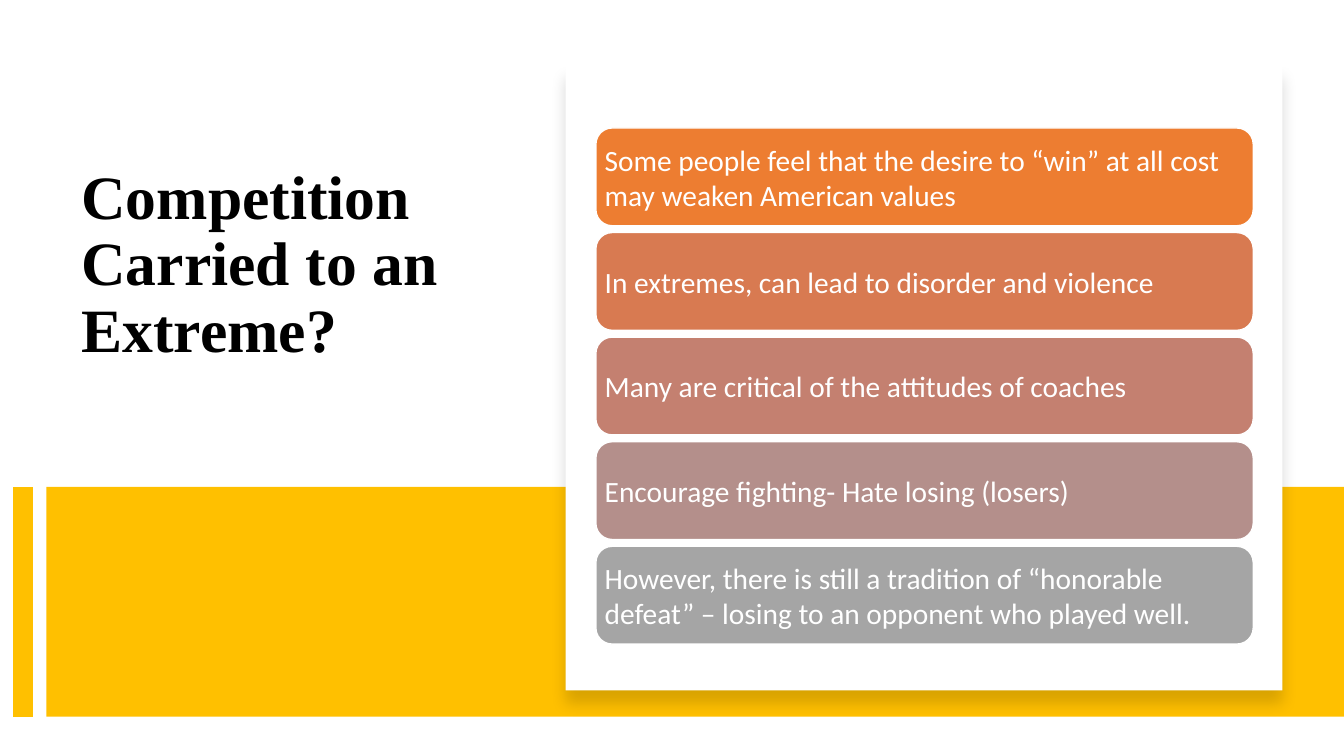
from lxml import etree
from pptx import Presentation
from pptx.dml.color import RGBColor
from pptx.enum.shapes import MSO_CONNECTOR, MSO_SHAPE
from pptx.enum.text import MSO_ANCHOR
from pptx.oxml import parse_xml
from pptx.oxml.ns import nsdecls, qn
from pptx.util import Inches, Pt

RECTANGLE, ROUNDED = MSO_SHAPE.RECTANGLE, MSO_SHAPE.ROUNDED_RECTANGLE
STRAIGHT = MSO_CONNECTOR.STRAIGHT
TOP, MIDDLE = MSO_ANCHOR.TOP, MSO_ANCHOR.MIDDLE

# Content
TITLE = "Competition Carried to an Extreme?"
POINTS = [
    ("Some people feel that the desire to “win” at all cost may weaken American values", "ED7D31"),
    ("In extremes, can lead to disorder and violence", "D87A51"),
    ("Many are critical of the attitudes of coaches", "C48070"),
    ("Encourage fighting- Hate losing (losers)", "B48F8B"),
    ("However, there is still a tradition of “honorable defeat” – losing to an opponent "
     "who played well.", "A5A5A5"),
]

# Theme
THEME = {
    "gold": "FFC000",
    "white": "FFFFFF",
    "title": {"name": "Times New Roman", "size": Pt(44), "bold": True, "color": "000000"},
    "point": {"name": "Calibri", "size": Pt(21), "bold": False, "color": "FFFFFF"},
}

# Layout, in inches
SLIDE_WIDTH, SLIDE_HEIGHT = 13.33, 7.5
TITLE_BOX = (0.71, 1.6, 4.15, 2.94)
BAND_LEFT, BAND_TOP, BAND_HEIGHT = 0.46, 4.83, 2.28
STRIPE_X = 0.23
CARD_BOX = (5.61, 0.64, 7.11, 6.21)
POINT_LEFT, POINT_TOP, POINT_WIDTH, POINT_HEIGHT = 5.91, 1.27, 6.52, 0.97
POINT_STEP = 1.0375


def add_block(slide, kind, box, color):
    shape = slide.shapes.add_shape(kind, *map(Inches, box))
    shape.shadow.inherit = False
    shape.fill.solid()
    shape.fill.fore_color.rgb = RGBColor.from_string(color)
    shape.line.fill.background()
    return shape


def write_text(shape, text, style, anchor, margins):
    frame = shape.text_frame
    frame.word_wrap = True
    frame.vertical_anchor = anchor
    for side, margin in margins.items():
        setattr(frame, f"margin_{side}", Inches(margin))
    paragraph = frame.paragraphs[0]
    run = paragraph.add_run()
    run.text = text
    for name, value in style.items():
        if name == "color":
            run.font.color.rgb = RGBColor.from_string(value)
        else:
            setattr(run.font, name, value)
    return paragraph


def add_soft_shadow(shape):
    effects = shape._element.spPr.find(qn("a:effectLst"))
    effects.append(parse_xml(
        f'<a:outerShdw {nsdecls("a")} blurRad="{Pt(11)}" dist="{Pt(10)}" dir="5400000" '
        'algn="t" rotWithShape="0"><a:srgbClr val="000000"><a:alpha val="15000"/>'
        '</a:srgbClr></a:outerShdw>'))


presentation = Presentation()
presentation.slide_width = Inches(SLIDE_WIDTH)
presentation.slide_height = Inches(SLIDE_HEIGHT)
slide = presentation.slides.add_slide(presentation.slide_layouts[6])

# Title
title = slide.shapes.add_textbox(*map(Inches, TITLE_BOX))
title_paragraph = write_text(title, TITLE, THEME["title"], TOP,
                             {"left": 0.1, "right": 0.1, "top": 0.05, "bottom": 0.05})
title_paragraph.line_spacing = 0.9

# Gold band and stripe
add_block(slide, RECTANGLE,
          (BAND_LEFT, BAND_TOP, SLIDE_WIDTH - BAND_LEFT, BAND_HEIGHT), THEME["gold"])
stripe = slide.shapes.add_connector(
    STRAIGHT, *map(Inches, (STRIPE_X, BAND_TOP, STRIPE_X, BAND_TOP + BAND_HEIGHT)))
stripe.line.color.rgb = RGBColor.from_string(THEME["gold"])
stripe.line.width = Pt(14)
etree.SubElement(stripe._element.spPr, qn("a:effectLst"))

# White card
add_soft_shadow(add_block(slide, RECTANGLE, CARD_BOX, THEME["white"]))

# Points
for index, (text, color) in enumerate(POINTS):
    top = POINT_TOP + index * POINT_STEP
    point = add_block(slide, ROUNDED, (POINT_LEFT, top, POINT_WIDTH, POINT_HEIGHT), color)
    point.line.color.rgb = RGBColor.from_string(THEME["white"])
    point.line.width = Pt(1)
    paragraph = write_text(point, text, THEME["point"], MIDDLE,
                           {"left": 0.04, "right": 0.04, "top": 0.04, "bottom": 0.04})
    paragraph.alignment = 1  # left

presentation.save("out.pptx")
